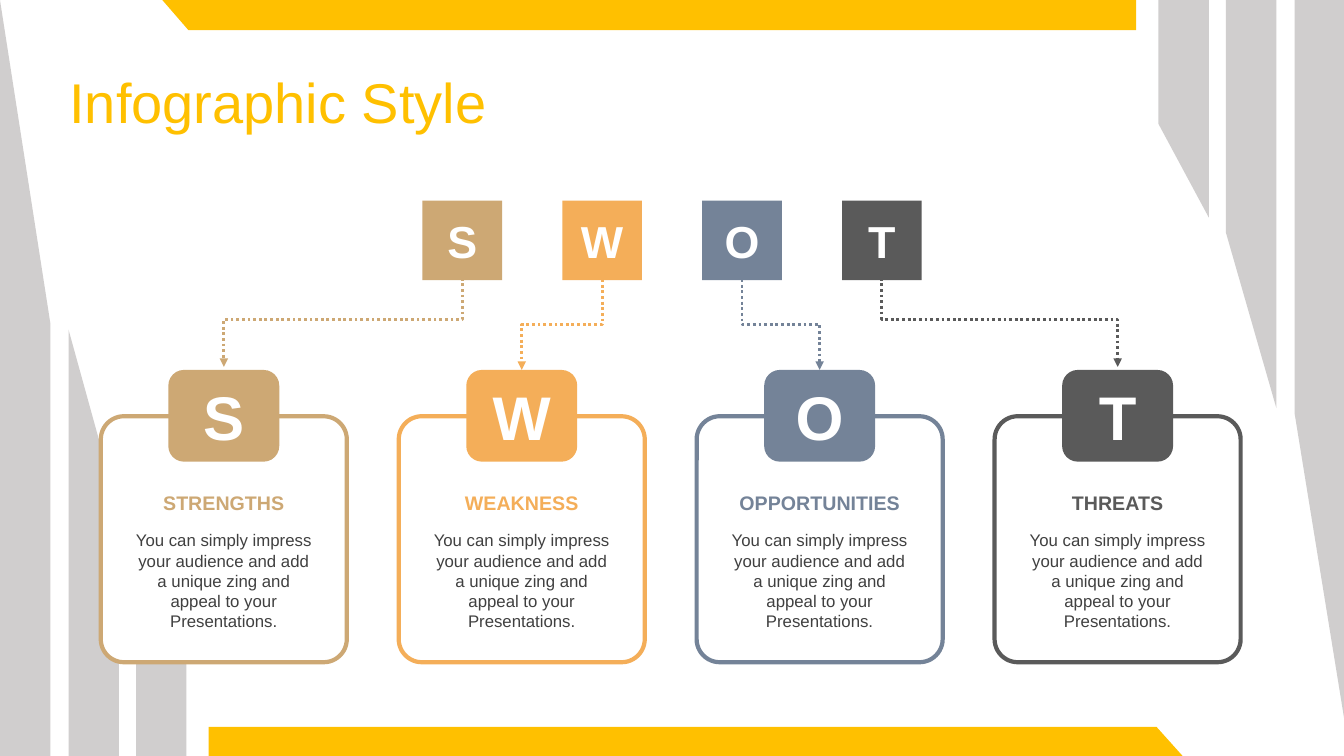
import pptx
import pptx.dml.color
import pptx.enum.dml
import pptx.enum.shapes
import pptx.enum.text
import pptx.oxml
import pptx.oxml.ns
import pptx.util
from pptx.util import Inches

SHAPES = pptx.enum.shapes.MSO_SHAPE
ANCHOR = pptx.enum.text.MSO_ANCHOR
ALIGN = pptx.enum.text.PP_ALIGN

AMBER = "FFC000"
GREY = "D0CECE"
WHITE = "FFFFFF"
BODY = "404040"
MESSAGE = ("You can simply impress your audience and add a unique zing "
           "and appeal to your Presentations.")
TOPICS = [
    ("STRENGTHS", "CDA874"),
    ("WEAKNESS", "F4AE59"),
    ("OPPORTUNITIES", "748398"),
    ("THREATS", "5A5A5A"),
]
BANDS = [
    [(2.07, 7.21), (11.47, 7.21), (11.73, 7.5), (2.07, 7.5)],
    [(1.61, 0), (11.27, 0), (11.27, 0.3), (1.87, 0.3)],
]
LEFT_STRIPES = [(1.35, 5.23, 6.2), (0.68, 3.27, 5.08), (0, 0, 3.21)]
RIGHT_STRIPES = [(11.49, 1.23, 2.16), (12.16, 2.31, 4.05), (12.84, 4.1, 7.18)]
STRIPE_WIDTH = 0.5

CARD_LEFT, CARD_TOP, CARD_SIZE, CARD_PITCH = 1, 4.13, 2.44, 2.955
TILE_LEFT, TILE_TOP, TILE_SIZE, TILE_PITCH = 4.19, 1.99, 0.79, 1.387
ARROW_SPANS = [(2.7, 3.64), (2.77, 3.67), (2.77, 3.67), (2.7, 3.64)]


def color(value):
    return pptx.dml.color.RGBColor.from_string(value)


def paint(shape, fill, line=None):
    shape.shadow.inherit = False
    shape.fill.solid()
    shape.fill.fore_color.rgb = color(fill)
    if line:
        shape.line.color.rgb = color(line)
        shape.line.width = pptx.util.Pt(3)
    else:
        shape.line.fill.background()


def write(shape, text, size, ink, bold=False, align=ALIGN.CENTER,
          anchor=ANCHOR.MIDDLE):
    frame = shape.text_frame
    frame.word_wrap = True
    frame.vertical_anchor = anchor
    paragraph = frame.paragraphs[0]
    paragraph.text = text
    paragraph.alignment = align
    paragraph.font.name = "Arial"
    paragraph.font.size = pptx.util.Pt(size)
    paragraph.font.bold = bold
    paragraph.font.color.rgb = color(ink)
    return paragraph


def add_block(page, kind, left, top, width, height, fill, line=None, corner=None):
    block = page.shapes.add_shape(
        kind, Inches(left), Inches(top), Inches(width), Inches(height))
    if corner is not None:
        block.adjustments[0] = corner
    paint(block, fill, line)
    return block


def add_text(page, left, top, width, height, *content, **style):
    box = page.shapes.add_textbox(
        Inches(left), Inches(top), Inches(width), Inches(height))
    return write(box, *content, **style)


def add_polygon(page, points, fill):
    corners = [(Inches(x), Inches(y)) for x, y in points]
    builder = page.shapes.build_freeform(*corners[0], scale=1.0)
    builder.add_line_segments(corners[1:], close=True)
    paint(builder.convert_to_shape(), fill)


def add_backdrop(page, height):
    for band in BANDS:
        add_polygon(page, band, AMBER)
    for left, start, end in LEFT_STRIPES:
        right = left + STRIPE_WIDTH
        add_polygon(page, [(left, start), (right, end),
                           (right, height), (left, height)], GREY)
    for left, start, end in RIGHT_STRIPES:
        right = left + STRIPE_WIDTH
        add_polygon(page, [(left, 0), (right, 0), (right, end), (left, start)], GREY)


def add_title(page, left, top, width, height):
    title = add_text(page, left, top, width, height, "Infographic Style", 40, AMBER,
                     align=ALIGN.LEFT)
    title.line_spacing = 0.9


def add_card(page, left, top, size, heading, tint):
    add_block(page, SHAPES.ROUNDED_RECTANGLE, left, top, size, size,
              WHITE, line=tint, corner=0.094)
    badge = add_block(page, SHAPES.ROUNDED_RECTANGLE, left + 0.67, top - 0.46,
                      1.1, 0.91, tint, corner=0.17)
    write(badge, heading[0], 44, WHITE, bold=True)
    add_text(page, left + 0.24, top + 0.69, size - 0.48, 0.34,
             heading, 14, tint, bold=True, anchor=ANCHOR.TOP)
    add_text(page, left + 0.24, top + 1.08, size - 0.48, 1.11,
             MESSAGE, 12, BODY, anchor=ANCHOR.TOP)


def add_tile(page, left, top, size, letter, tint):
    tile = add_block(page, SHAPES.RECTANGLE, left, top, size, size, tint)
    write(tile, letter, 32, WHITE, bold=True)


def add_elbow_arrow(page, start_x, start_y, end_x, end_y, tint):
    middle_x, middle_y = (start_x + end_x) / 2, (start_y + end_y) / 2
    half_drop, half_run = (end_y - start_y) / 2, abs(end_x - start_x) / 2
    rightward = end_x > start_x
    reach = -half_drop if rightward else half_drop
    arrow = page.shapes.add_connector(
        pptx.enum.shapes.MSO_CONNECTOR.ELBOW,
        Inches(middle_x - reach), Inches(middle_y - half_run),
        Inches(middle_x + reach), Inches(middle_y + half_run))
    arrow.line.color.rgb = color(tint)
    arrow.line.width = pptx.util.Pt(2)
    arrow.line.dash_style = pptx.enum.dml.MSO_LINE.ROUND_DOT
    properties = arrow._element.spPr
    degrees = 270 if rightward else 90
    properties.find(pptx.oxml.ns.qn("a:xfrm")).set("rot", str(degrees * 60000))
    namespace = pptx.oxml.ns.nsdecls("a")
    properties.find(pptx.oxml.ns.qn("a:ln")).append(
        pptx.oxml.parse_xml(f'<a:tailEnd {namespace} type="triangle"/>'))
    properties.append(pptx.oxml.parse_xml(f"<a:effectLst {namespace}/>"))


def add_swot(page):
    for index, (heading, tint) in enumerate(TOPICS):
        card_left = CARD_LEFT + index * CARD_PITCH
        tile_left = TILE_LEFT + index * TILE_PITCH
        add_card(page, card_left, CARD_TOP, CARD_SIZE, heading, tint)
        add_tile(page, tile_left, TILE_TOP, TILE_SIZE, heading[0], tint)
        start_y, end_y = ARROW_SPANS[index]
        add_elbow_arrow(page, tile_left + TILE_SIZE / 2, start_y,
                        card_left + CARD_SIZE / 2, end_y, tint)


def main():
    deck = pptx.Presentation()
    deck.slide_width, deck.slide_height = Inches(13.33), Inches(7.5)
    page = deck.slides.add_slide(deck.slide_layouts[6])
    add_backdrop(page, 7.5)
    add_title(page, 0.59, 0.65, 12.66, 0.79)
    add_swot(page)
    deck.save("out.pptx")


if __name__ == "__main__":
    main()
